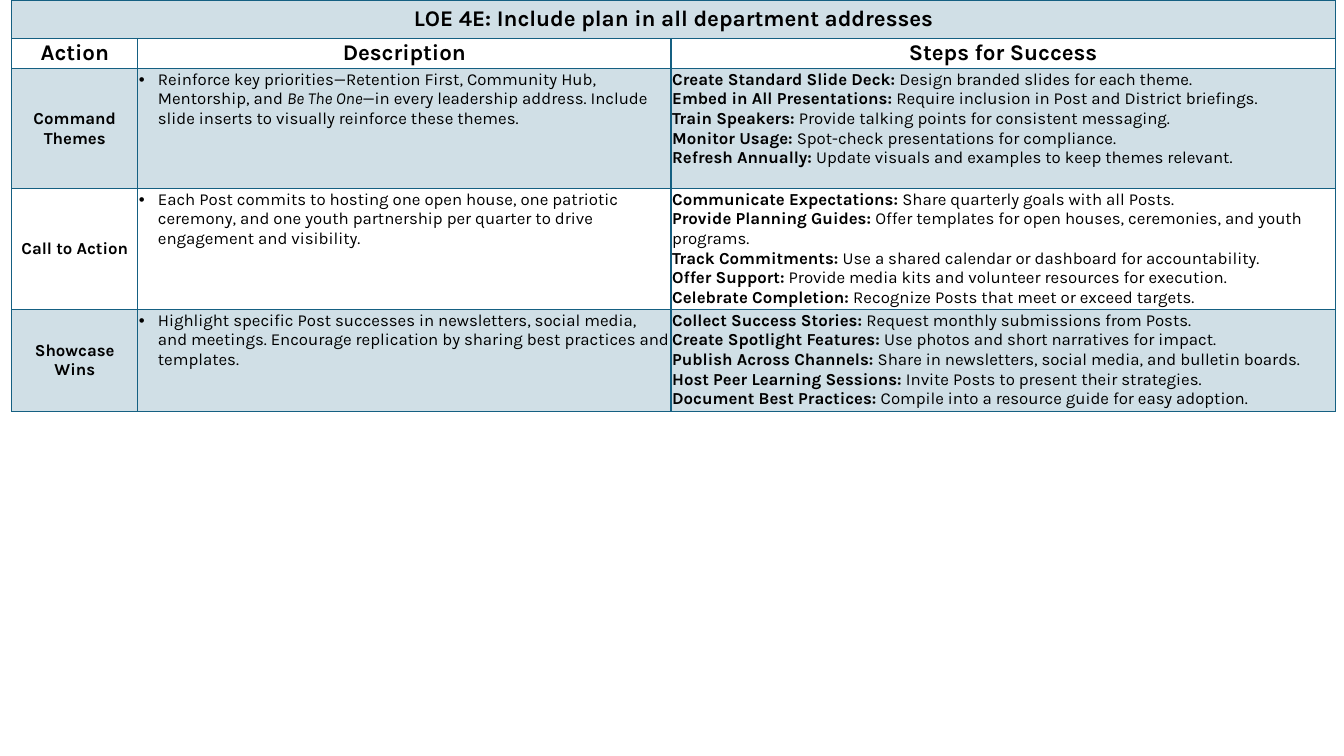
from dataclasses import dataclass

from lxml import etree
from pptx import Presentation
from pptx import util as u
from pptx.dml.color import RGBColor
from pptx.enum import text
from pptx.oxml.ns import qn


@dataclass(frozen=True)
class Theme:
    font: str = "Karla"
    ink: RGBColor = RGBColor(0, 0, 0)
    accent: RGBColor = RGBColor(0x15, 0x60, 0x82)
    tint: int = 20  # opacity of the shaded rows, percent
    heading: int = 16
    body: int = 12
    border: int = 1


THEME = Theme()
INSET = u.Cm(0.03)
BULLET_INDENT = u.Cm(0.48)
COLUMN_WIDTHS = (3.17, 13.44, 16.74)
HEADER_HEIGHTS = (0.97, 0.76)

PLAN_TITLE = "LOE 4E: Include plan in all department addresses"
COLUMN_HEADINGS = ("Action", "Description", "Steps for Success")

# Each action: name, row height, shaded, description as (text, italic), steps
ACTIONS = (
    ("Command Themes", 3.02, True, (
        ("Reinforce key priorities—Retention First, Community Hub, Mentorship, and ", False),
        ("Be The One", True),
        ("—in every leadership address. Include slide inserts to visually "
         "reinforce these themes.", False),
    ), (
        ("Create Standard Slide Deck:", "Design branded slides for each theme."),
        ("Embed in All Presentations:", "Require inclusion in Post and District briefings."),
        ("Train Speakers:", "Provide talking points for consistent messaging."),
        ("Monitor Usage:", "Spot-check presentations for compliance."),
        ("Refresh Annually:", "Update visuals and examples to keep themes relevant."),
    )),
    ("Call to Action", 3.05, False, (
        ("Each Post commits to hosting one open house, one patriotic ceremony, and one "
         "youth partnership per quarter to drive engagement and visibility.", False),
    ), (
        ("Communicate Expectations:", "Share quarterly goals with all Posts."),
        ("Provide Planning Guides:",
         "Offer templates for open houses, ceremonies, and youth programs."),
        ("Track Commitments:", "Use a shared calendar or dashboard for accountability."),
        ("Offer Support:", "Provide media kits and volunteer resources for execution."),
        ("Celebrate Completion:", "Recognize Posts that meet or exceed targets."),
    )),
    ("Showcase Wins", 2.57, True, (
        ("Highlight specific Post successes in newsletters, social media, and meetings. "
         "Encourage replication by sharing best practices and templates.", False),
    ), (
        ("Collect Success Stories:", "Request monthly submissions from Posts."),
        ("Create Spotlight Features:", "Use photos and short narratives for impact."),
        ("Publish Across Channels:", "Share in newsletters, social media, and bulletin boards."),
        ("Host Peer Learning Sessions:", "Invite Posts to present their strategies."),
        ("Document Best Practices:", "Compile into a resource guide for easy adoption."),
    )),
)


def add_text(paragraph, wording, size=THEME.body, bold=False, italic=False):
    run = paragraph.add_run()
    run.text = wording
    run.font.name = THEME.font
    run.font.size = u.Pt(size)
    run.font.bold = bold
    run.font.italic = italic
    run.font.color.rgb = THEME.ink


def add_bullet(paragraph):
    properties = paragraph._p.get_or_add_pPr()
    properties.set("marL", str(BULLET_INDENT))
    properties.set("indent", str(-BULLET_INDENT))
    etree.SubElement(properties, qn("a:buFont"), typeface="Arial")
    etree.SubElement(properties, qn("a:buChar"), char="•")


def format_cell(cell, shaded):
    cell.margin_left = cell.margin_right = INSET
    cell.margin_top = cell.margin_bottom = INSET
    properties = cell._tc.get_or_add_tcPr()
    if shaded:
        cell.fill.solid()
        cell.fill.fore_color.rgb = THEME.accent
        tone = properties.find(".//" + qn("a:srgbClr"))
        etree.SubElement(tone, qn("a:alpha"), val=str(THEME.tint * 1000))
    else:
        cell.fill.background()
    # Borders come before the fill in the cell properties
    for position, side in enumerate(("a:lnL", "a:lnR", "a:lnT", "a:lnB")):
        border = etree.Element(qn(side), w=str(u.Pt(THEME.border)))
        paint = etree.SubElement(border, qn("a:solidFill"))
        etree.SubElement(paint, qn("a:srgbClr"), val=str(THEME.accent))
        properties.insert(position, border)


def fill_label(cell, wording, size):
    cell.vertical_anchor = text.MSO_ANCHOR.MIDDLE
    paragraph = cell.text_frame.paragraphs[0]
    paragraph.alignment = text.PP_ALIGN.CENTER
    add_text(paragraph, wording, size=size, bold=True)


def fill_description(cell, pieces):
    paragraph = cell.text_frame.paragraphs[0]
    add_bullet(paragraph)
    for wording, italic in pieces:
        add_text(paragraph, wording, italic=italic)


def fill_steps(cell, steps):
    frame = cell.text_frame
    for index, (step, detail) in enumerate(steps):
        paragraph = frame.add_paragraph() if index else frame.paragraphs[0]
        add_text(paragraph, step, bold=True)
        add_text(paragraph, " " + detail)


def add_plan_table(slide, left, top):
    heights = HEADER_HEIGHTS + tuple(action[1] for action in ACTIONS)
    shading = (True, False) + tuple(action[2] for action in ACTIONS)
    plan = slide.shapes.add_table(
        len(heights), len(COLUMN_WIDTHS), left, top,
        u.Cm(sum(COLUMN_WIDTHS)), u.Cm(sum(heights))).table
    plan.first_row = plan.horz_banding = False
    for column, width in zip(plan.columns, COLUMN_WIDTHS):
        column.width = u.Cm(width)
    for row, height, shaded in zip(plan.rows, heights, shading):
        row.height = u.Cm(height)
        for cell in row.cells:
            format_cell(cell, shaded)

    # Title and column headings
    plan.cell(0, 0).merge(plan.cell(0, len(COLUMN_WIDTHS) - 1))
    fill_label(plan.cell(0, 0), PLAN_TITLE, THEME.heading)
    for column, heading in enumerate(COLUMN_HEADINGS):
        fill_label(plan.cell(1, column), heading, THEME.heading)

    # Actions
    for row, (action, _, _, description, steps) in enumerate(ACTIONS, len(HEADER_HEIGHTS)):
        fill_label(plan.cell(row, 0), action, THEME.body)
        fill_description(plan.cell(row, 1), description)
        fill_steps(plan.cell(row, 2), steps)


def main():
    deck = Presentation()
    deck.slide_width, deck.slide_height = u.Cm(33.87), u.Cm(19.05)
    blank_layout = deck.slide_layouts[6]
    slide = deck.slides.add_slide(blank_layout)
    add_plan_table(slide, left=u.Cm(0.3), top=u.Cm(0))
    deck.save("out.pptx")


if __name__ == "__main__":
    main()
